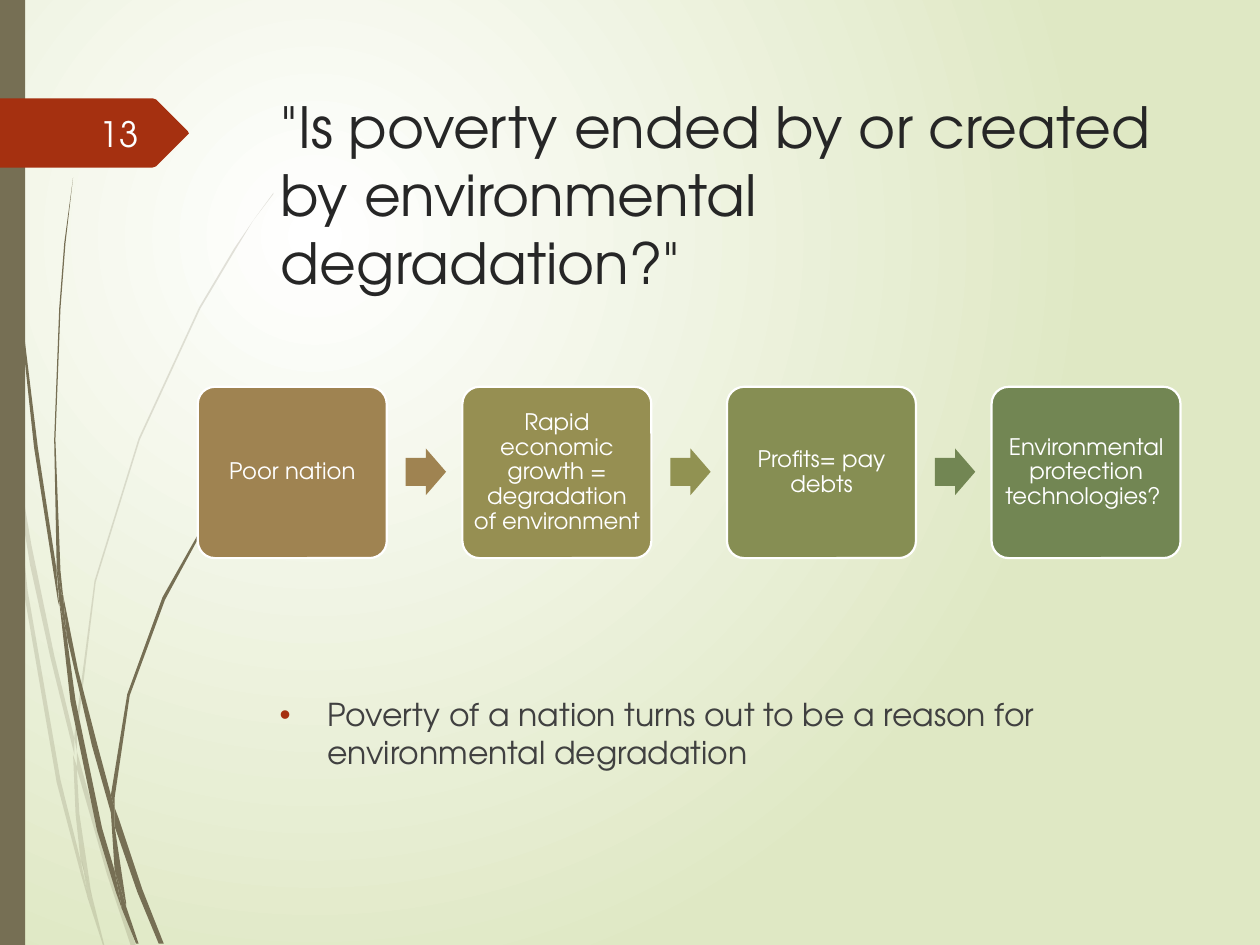
import pptx
import pptx.util
import pptx.dml.color
import pptx.enum.shapes
import pptx.enum.text
import pptx.oxml.ns
from lxml import etree

Inches, Pt = pptx.util.Inches, pptx.util.Pt
RGB = pptx.dml.color.RGBColor
KIND = pptx.enum.shapes.MSO_SHAPE
ALIGN = pptx.enum.text.PP_ALIGN
ANCHOR = pptx.enum.text.MSO_ANCHOR
qn = pptx.oxml.ns.qn

FONT = "TeX Gyre Adventor"
COLORS = {
    "glow": "FFFFFF", "edge": "DFE8C4", "stem": "766F54", "flag": "A53010",
    "title": "262626", "body": "404040", "number": "FEFFFF", "white": "FFFFFF",
}
TITLE = '"Is poverty ended by or created by environmental degradation?"'
BODY = "Poverty of a nation turns out to be a reason for environmental degradation"
NUMBER = "13"
# step text, box colour, colour of the arrow that follows
STEPS = [
    ("Poor nation", "9F8351", "9F8351"),
    ("Rapid economic growth = degradation of environment", "968F52", "919252"),
    ("Profits= pay debts", "868E53", "728653"),
    ("Environmental protection technologies? ", "728653", None),
]
FLAG = [(0, 0.78), (1.21, 0.78), (1.24, 0.79), (1.49, 1.04), (1.5, 1.06),
        (1.49, 1.07), (1.24, 1.32), (1.21, 1.33), (0, 1.33)]

# Grass blades, as corner points in inches
PALE = [
    [(0.08, 3.5), (0.06, 3.22), (0, 2.82), (0, 2.99), (0.07, 3.44)],
    [(0.4, 5.22), (0.59, 5.99), (0.59, 5.86), (0.43, 5.2), (0.25, 4.33), (0.1, 3.45),
     (0.12, 3.76), (0.24, 4.49)],
    [(0.64, 6.07), (0.61, 5.96), (0.61, 6.1), (0.85, 6.94), (1.04, 7.51), (1.08, 7.51),
     (0.88, 6.92)],
    [(0.64, 6.83), (0.48, 6.19), (0.22, 4.69), (0.12, 3.76), (0.08, 3.5), (0.19, 4.7),
     (0.45, 6.21), (0.64, 6.93), (0.7, 7.14), (0.69, 7.07)],
    [(0.58, 5.99), (0.6, 6.46), (0.64, 6.83), (0.67, 6.92), (0.73, 7.11), (0.72, 7.06),
     (0.63, 6.46), (0.61, 6.1), (0.61, 6.08)],
    [(0.61, 5.84), (0.76, 4.62), (1.11, 3.49), (1.59, 2.45), (1.87, 1.98), (2.01, 1.75),
     (2.17, 1.54), (2.17, 1.53), (2.01, 1.75), (1.86, 1.97), (1.58, 2.44), (1.1, 3.48),
     (0.75, 4.61), (0.59, 5.84), (0.59, 5.86), (0.61, 5.96)],
    [(0.67, 6.92), (0.65, 6.83), (0.69, 7.07), (0.7, 7.14), (0.82, 7.51), (0.83, 7.51),
     (0.73, 7.11)],
]
DARK = [
    [(0.05, 1.1), (0.14, 2.33), (0.27, 3.55), (0.46, 4.77), (0.47, 4.81), (0.45, 4.57),
     (0.45, 4.53), (0.3, 3.55), (0.15, 2.32), (0.06, 1.09), (0.04, 0.48), (0.03, 0),
     (0.02, 0), (0.03, 0.48)],
    [(0.73, 5.92), (0.88, 6.45), (0.88, 6.31), (0.77, 5.9), (0.62, 5.32), (0.5, 4.72),
     (0.53, 5.05)],
    [(0.94, 6.49), (0.91, 6.41), (0.91, 6.56), (1.09, 7.08), (1.26, 7.49), (1.3, 7.49),
     (1.13, 7.06)],
    [(0.91, 6.91), (0.81, 6.57), (0.6, 5.56), (0.53, 5.05), (0.47, 4.77), (0.56, 5.57),
     (0.77, 6.59), (0.92, 7.08), (0.97, 7.22), (0.96, 7.17)],
    [(0.5, 4.72), (0.48, 4.53), (0.44, 3.49), (0.48, 2.45), (0.52, 1.93), (0.58, 1.41),
     (0.51, 1.93), (0.47, 2.45), (0.43, 3.49), (0.45, 4.49), (0.49, 4.72)],
    [(0.47, 4.77), (0.53, 5.05), (0.5, 4.72), (0.49, 4.72), (0.45, 4.49), (0.45, 4.53)],
    [(0.91, 6.33), (1.03, 5.52), (1.31, 4.76), (1.69, 4.06), (1.91, 3.74), (2.03, 3.59),
     (2.16, 3.44), (2.15, 3.44), (2.03, 3.58), (1.91, 3.73), (1.68, 4.05), (1.29, 4.74),
     (1.01, 5.51), (0.88, 6.31), (0.91, 6.41)],
    [(0.88, 6.45), (0.91, 6.91), (0.96, 7.06), (1, 7.19), (1, 7.16), (0.91, 6.56),
     (0.91, 6.41), (0.88, 6.31)],
    [(0.96, 7.06), (0.91, 6.91), (0.96, 7.17), (0.97, 7.22), (1.08, 7.49), (1.1, 7.49),
     (1, 7.19)],
]


def paint(shape, color, line=None):
    shape.shadow.inherit = False
    shape.fill.solid()
    shape.fill.fore_color.rgb = RGB.from_string(color)
    if line:
        shape.line.color.rgb = RGB.from_string(line)
        shape.line.width = Pt(1.25)
    else:
        shape.line.fill.background()
    return shape


def outline(shapes, points, color):
    spots = [(Inches(x), Inches(y)) for x, y in points]
    pen = shapes.build_freeform(*spots[0])
    pen.add_line_segments(spots[1:], close=True)
    return paint(pen.convert_to_shape(), color)


def block(shapes, kind, box, color, line=None):
    return paint(shapes.add_shape(kind, *map(Inches, box)), color, line)


def write(shape, text, size, color, align=ALIGN.LEFT, anchor=ANCHOR.TOP):
    frame = shape.text_frame
    frame.text = text
    frame.word_wrap = True
    frame.vertical_anchor = anchor
    para = frame.paragraphs[0]
    para.alignment = align
    font = para.runs[0].font
    font.name, font.size = FONT, Pt(size)
    font.color.rgb = RGB.from_string(color)
    return para


def label(shapes, box, *args):
    return write(shapes.add_textbox(*map(Inches, box)), *args)


def backdrop(slide):
    """Fill the slide with a round glow."""
    fill = slide.background.fill
    fill.gradient()
    for stop, name in zip(fill.gradient_stops, ("glow", "edge")):
        stop.color.rgb = RGB.from_string(COLORS[name])
    lin = slide.element.find(".//" + qn("a:lin"))
    ring = etree.Element(qn("a:path"), {"path": "circle"})
    etree.SubElement(ring, qn("a:fillToRect"), l="50000", t="50000", r="100000", b="100000")
    lin.getparent().replace(lin, ring)


def bullet(para, color):
    props = para._p.get_or_add_pPr()
    props.set("marL", str(Inches(0.38)))
    props.set("indent", str(Inches(-0.38)))
    tint = etree.SubElement(props, qn("a:buClr"))
    etree.SubElement(tint, qn("a:srgbClr"), val=color)
    etree.SubElement(props, qn("a:buFont"), typeface="Arial")
    etree.SubElement(props, qn("a:buChar"), char="•")


def main():
    deck = pptx.Presentation()
    deck.slide_width, deck.slide_height = Inches(10), Inches(7.5)
    slide = deck.slides.add_slide(deck.slide_layouts[6])
    shapes = slide.shapes
    backdrop(slide)
    for blades, alpha in ((PALE, "20000"), (DARK, "100000")):
        group = shapes.add_group_shape()
        for blade in blades:
            shape = outline(group.shapes, blade, COLORS["stem"])
            tint = shape.element.spPr.find(qn("a:solidFill"))[0]
            etree.SubElement(tint, qn("a:alpha"), val=alpha)
    block(shapes, KIND.RECTANGLE, (0, 0, 0.2, 7.5), COLORS["stem"])
    outline(shapes, FLAG, COLORS["flag"])

    label(shapes, (2.13, 0.68, 7.21, 1.4), TITLE, 32.4, COLORS["title"])
    para = label(shapes, (2.12, 5.47, 7.21, 1), BODY, 18, COLORS["body"])
    para.space_before = Pt(10)
    bullet(para, COLORS["flag"])
    label(shapes, (0.56, 0.86, 0.64, 0.4), NUMBER, 20, COLORS["number"],
          ALIGN.RIGHT, ANCHOR.MIDDLE)

    flow = shapes.add_group_shape().shapes
    for i, (text, color, tail) in enumerate(STEPS):
        left = 1.57 + 2.1 * i
        box = block(flow, KIND.ROUNDED_RECTANGLE, (left, 3.07, 1.5, 1.36), color, COLORS["white"])
        box.adjustments[0] = 0.1
        frame = box.text_frame
        frame.margin_left = frame.margin_right = Inches(0.05)
        write(box, text, 13, COLORS["white"], ALIGN.CENTER, ANCHOR.MIDDLE).line_spacing = 0.9
        if tail:
            arrow = block(flow, KIND.RIGHT_ARROW, (left + 1.65, 3.56, 0.32, 0.37), tail)
            arrow.adjustments[0], arrow.adjustments[1] = 0.6, 0.5
    deck.save("out.pptx")


if __name__ == "__main__":
    main()
